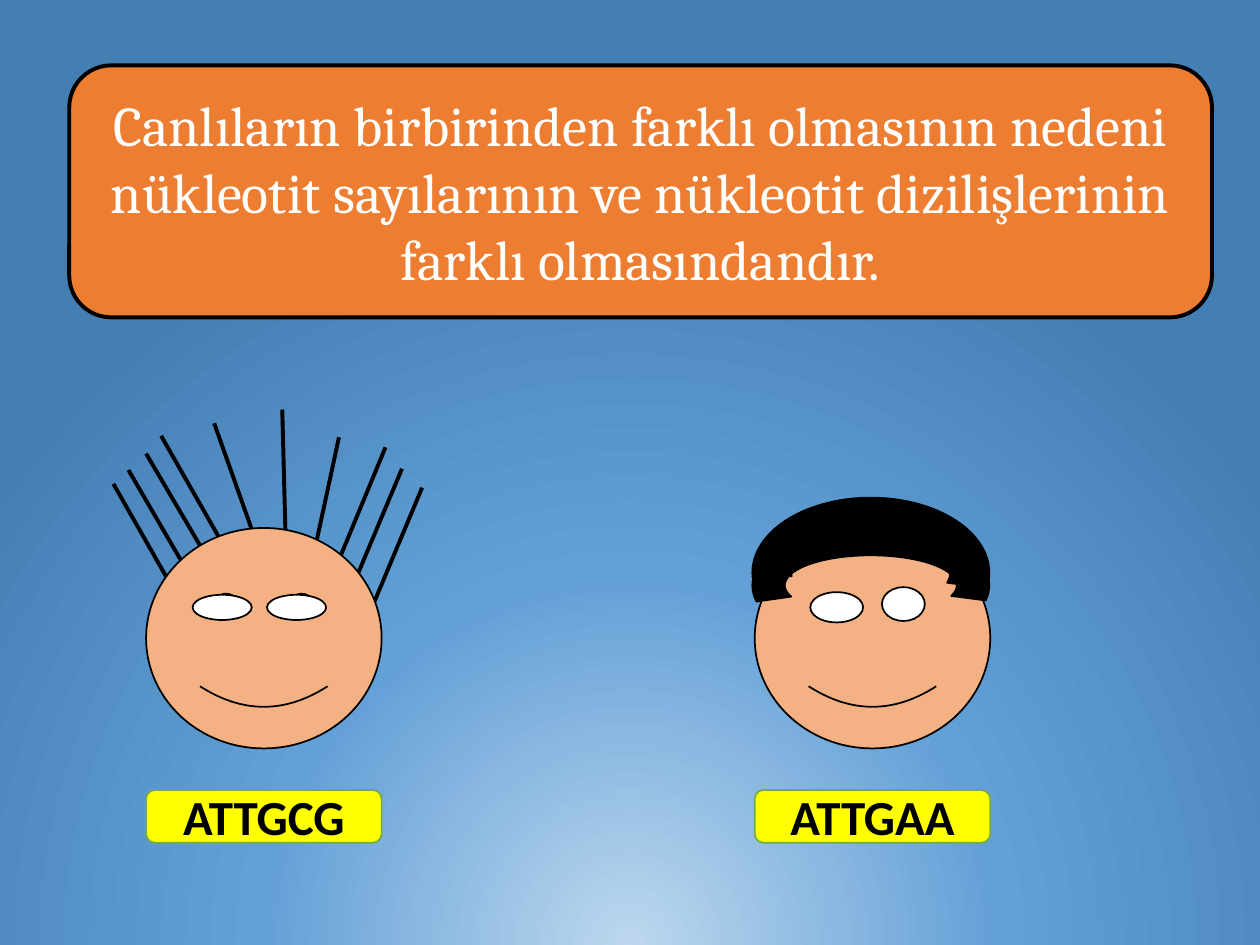
import pptx
import pptx.dml.color
import pptx.enum.shapes
import pptx.enum.text
import pptx.oxml
import pptx.oxml.ns
import pptx.util
from lxml import etree

Pt = pptx.util.Pt
SHAPE = pptx.enum.shapes.MSO_SHAPE
qn = pptx.oxml.ns.qn

FACE_WIDTH, FACE_HEIGHT = 134.6, 126
SPIKES = [
    (8.6, -52.6, 46.8, 14.4), (0, -42.5, 38.9, 23.8),
    (-18.7, -25.2, 19.4, 41.8), (-10.1, -33.1, 28.8, 33.8),
    (38.9, -59.8, 63.4, 9.4), (77.8, -67.7, 79.9, 13.7),
    (110.2, -51.8, 95, 18.7), (136.8, -46.1, 107.3, 25.2),
    (146.2, -33.8, 116.6, 36.7), (157.7, -23, 128.2, 47.5),
]
OVAL_EYES = [(26.6, 38.2, 33.8, 14.4), (69.1, 38.2, 33.8, 14.4)]
ROUND_EYES = [(31.7, 36.7, 30.2, 17.3), (72.7, 33.8, 24.5, 19.4)]
FRINGES = [
    (-1.4, -2.9, 135.4, 71.3, (103.12, 4.52, 0.26)),
    (-1.4, -17.3, 135.4, 85.7, (106.45, 4.52, 0.26)),
]


def color(hex_value):
    return pptx.dml.color.RGBColor.from_string(hex_value)


def add_outlined(slide, preset, box, fill, line="000000", weight=1):
    outlined = slide.shapes.add_shape(preset, *map(Pt, box))
    outlined.shadow.inherit = False
    outlined.fill.solid()
    outlined.fill.fore_color.rgb = color(fill)
    outlined.line.color.rgb = color(line)
    outlined.line.width = Pt(weight)
    return outlined


def write_centred(holder, text, font, size, hex_value, bold=False):
    frame = holder.text_frame
    frame.word_wrap = True
    frame.vertical_anchor = pptx.enum.text.MSO_ANCHOR.MIDDLE
    paragraph = frame.paragraphs[0]
    paragraph.alignment = pptx.enum.text.PP_ALIGN.CENTER
    run = paragraph.add_run()
    run.text = text
    run.font.name = font
    run.font.size = Pt(size)
    run.font.bold = bold
    run.font.color.rgb = color(hex_value)


def paint_background(slide):
    slide.background.fill.gradient()
    plain = slide.element.find(".//" + qn("a:gradFill"))
    glow = pptx.oxml.parse_xml(
        f'<a:gradFill {pptx.oxml.ns.nsdecls("a")} rotWithShape="1"><a:gsLst>'
        '<a:gs pos="0"><a:srgbClr val="BDD7EE"><a:alpha val="62000"/></a:srgbClr></a:gs>'
        '<a:gs pos="47000"><a:srgbClr val="63A0D7"/></a:gs>'
        '<a:gs pos="100000"><a:srgbClr val="447FB4"/></a:gs></a:gsLst>'
        '<a:path path="circle"><a:fillToRect l="50000" t="130000" r="50000" b="-30000"/></a:path>'
        '</a:gradFill>'
    )
    plain.getparent().replace(plain, glow)


def add_statement(slide, box):
    statement = add_outlined(slide, SHAPE.ROUNDED_RECTANGLE, box, "ED7D31", weight=2.25)
    write_centred(
        statement,
        "Canlıların birbirinden farklı olmasının nedeni nükleotit sayılarının "
        "ve nükleotit dizilişlerinin farklı olmasındandır.",
        "Cambria", 32, "FFFFFF",
    )


def add_spikes(slide, left, top):
    for tip_x, tip_y, root_x, root_y in SPIKES:
        spike = slide.shapes.add_connector(
            pptx.enum.shapes.MSO_CONNECTOR.STRAIGHT,
            Pt(left + tip_x), Pt(top + tip_y), Pt(left + root_x), Pt(top + root_y),
        )
        spike.line.color.rgb = color("000000")
        spike.line.width = Pt(2.25)
        etree.SubElement(spike.element.spPr, qn("a:effectLst"))


def add_fringe(slide, left, top):
    for x, y, width, height, bends in FRINGES:
        fringe = add_outlined(
            slide, SHAPE.BLOCK_ARC, (left + x, top + y, width, height), "000000")
        for index, bend in enumerate(bends):
            fringe.adjustments[index] = bend


def add_face(slide, left, top, eyes, code):
    add_outlined(slide, SHAPE.SMILEY_FACE, (left, top, FACE_WIDTH, FACE_HEIGHT), "F4B183")
    for x, y, width, height in eyes:
        add_outlined(slide, SHAPE.OVAL, (left + x, top + y, width, height), "FFFFFF")
    label = add_outlined(
        slide, SHAPE.ROUNDED_RECTANGLE, (left, top + 149.7, FACE_WIDTH, 30.2),
        "FFFF00", "70AD47")
    write_centred(label, code, "Calibri", 28, "000000", True)


def main():
    deck = pptx.Presentation()
    deck.slide_width, deck.slide_height = Pt(720), Pt(540)
    slide = deck.slides.add_slide(deck.slide_layouts[6])
    paint_background(slide)
    add_statement(slide, (39.6, 37.4, 653, 144))
    face_top, spiky_left, fringed_left = 301.7, 83.5, 431.3
    add_spikes(slide, spiky_left, face_top)
    add_face(slide, spiky_left, face_top, OVAL_EYES, "ATTGCG")
    add_face(slide, fringed_left, face_top, ROUND_EYES, "ATTGAA")
    add_fringe(slide, fringed_left, face_top)
    deck.save("out.pptx")


if __name__ == "__main__":
    main()
